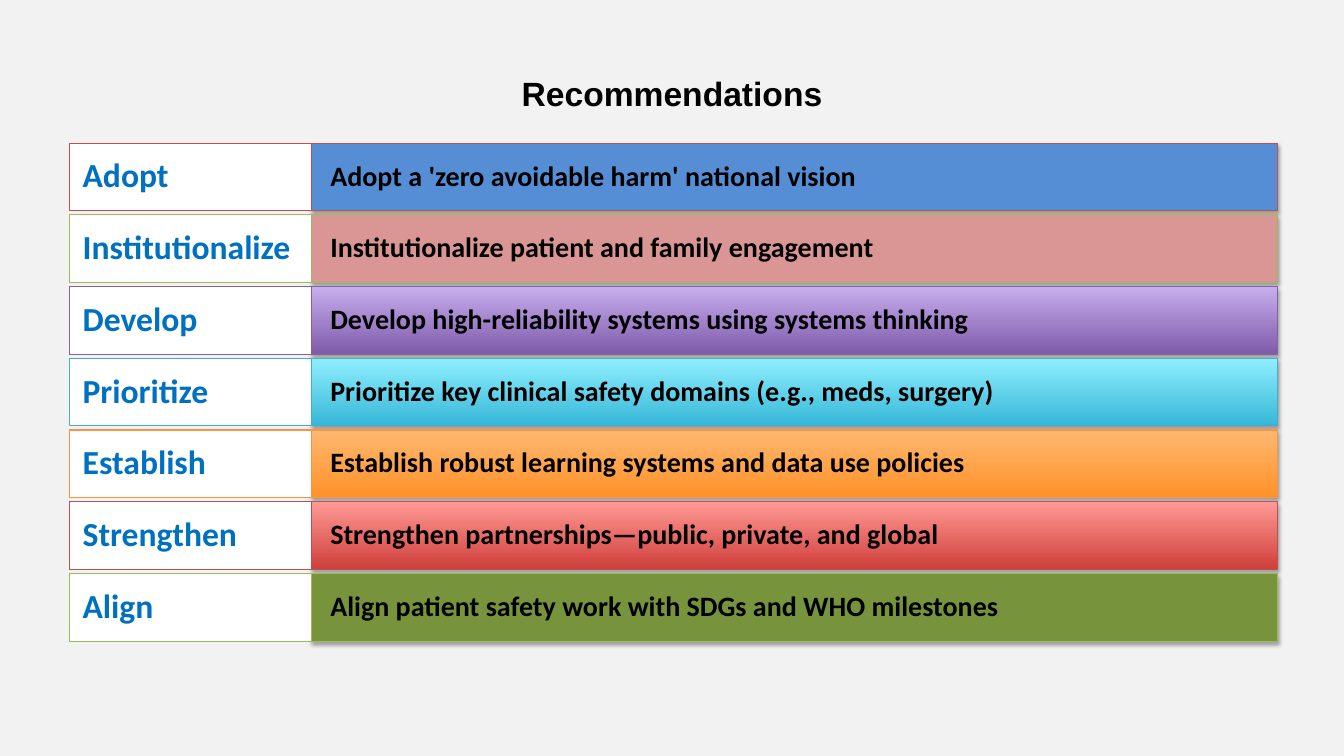
from lxml import etree
from pptx import Presentation
from pptx.dml.color import RGBColor
from pptx.enum.shapes import MSO_SHAPE
from pptx.enum.text import MSO_ANCHOR, PP_ALIGN
from pptx.oxml.ns import qn
from pptx.util import Inches, Pt

RECT = MSO_SHAPE.RECTANGLE
MIDDLE = MSO_ANCHOR.MIDDLE
LEFT, CENTER = PP_ALIGN.LEFT, PP_ALIGN.CENTER

SLIDE_W, SLIDE_H = 13.33, 7.5
ROW_GAP = 0.04
LABEL_SHARE = 0.2

# Label, statement, line colour, fill (one colour, or bottom and top of a gradient)
ROWS = [
    ("Adopt", "Adopt a 'zero avoidable harm' national vision", "BF504D", ["558ED5"]),
    ("Institutionalize", "Institutionalize patient and family engagement", "9BBB59", ["D99694"]),
    ("Develop", "Develop high-reliability systems using systems thinking",
     "8064A2", ["7F5AAB", "C7AEED"]),
    ("Prioritize", "Prioritize key clinical safety domains (e.g., meds, surgery)",
     "49ACC5", ["36B7D7", "90EFFF"]),
    ("Establish", "Establish robust learning systems and data use policies",
     "F79543", ["FF9228", "FFB771"]),
    ("Strengthen", "Strengthen partnerships—public, private, and global",
     "BF504D", ["D03F3B", "FF9995"]),
    ("Align", "Align patient safety work with SDGs and WHO milestones", "9BBB59", ["77933C"]),
]


def rgb(color):
    return RGBColor.from_string(color)


def set_text(sp, text, size, font, color, align, inset_x, inset_y, spacing=1.0):
    tf = sp.text_frame
    tf.word_wrap = True
    tf.vertical_anchor = MIDDLE
    tf.margin_left = tf.margin_right = Inches(inset_x)
    tf.margin_top = tf.margin_bottom = Inches(inset_y)
    p = tf.paragraphs[0]
    p.text = text
    p.alignment = align
    p.line_spacing = spacing
    f = p.runs[0].font
    f.name, f.size, f.bold = font, Pt(size), True
    f.color.rgb = rgb(color)


def add_shadow(sp):
    effects = sp._element.spPr.find(qn("a:effectLst"))
    shadow = etree.SubElement(effects, qn("a:outerShdw"), blurRad=str(Pt(3.1)),
                              dist=str(Pt(1.8)), dir="5400000", rotWithShape="0")
    black = etree.SubElement(shadow, qn("a:srgbClr"), val="000000")
    etree.SubElement(black, qn("a:alpha"), val="35000")


def add_rect(slide, x, y, w, h, colors, line):
    sp = slide.shapes.add_shape(RECT, Inches(x), Inches(y), Inches(w), Inches(h))
    sp.shadow.inherit = False
    if len(colors) == 1:
        sp.fill.solid()
        sp.fill.fore_color.rgb = rgb(colors[0])
    else:
        sp.fill.gradient()
        sp.fill.gradient_angle = 90
        for stop, color, position in zip(sp.fill.gradient_stops, colors, (0, 1)):
            stop.color.rgb = rgb(color)
            stop.position = position
    sp.line.color.rgb = rgb(line)
    sp.line.width = Pt(0.75)
    return sp


def add_title(slide, x, y, w, h):
    sp = slide.shapes.add_textbox(Inches(x), Inches(y), Inches(w), Inches(h))
    set_text(sp, "Recommendations", 24, "Arial", "000000", CENTER, 0.1, 0.05)


def add_row(slide, x, y, w, h, label, statement, line, colors):
    label_w = w * LABEL_SHARE
    bar = add_rect(slide, x + label_w, y, w - label_w, h, colors, line)
    add_shadow(bar)
    set_text(bar, statement, 20, "Calibri", "000000", LEFT, 0.19, 0.17, 0.9)
    tag = add_rect(slide, x, y, label_w, h, ["FFFFFF"], line)
    set_text(tag, label, 24, "Calibri", "0070C0", LEFT, 0.13, 0.07, 0.9)


def add_recommendations(slide, x, y, w, h):
    row_h = (h - ROW_GAP * (len(ROWS) - 1)) / len(ROWS)
    for i, row in enumerate(ROWS):
        add_row(slide, x, y + i * (row_h + ROW_GAP), w, row_h, *row)


def main():
    prs = Presentation()
    prs.slide_width, prs.slide_height = Inches(SLIDE_W), Inches(SLIDE_H)
    slide = prs.slides.add_slide(prs.slide_layouts[6])

    # Background
    slide.background.fill.solid()
    slide.background.fill.fore_color.rgb = rgb("F2F2F2")

    # Title above the list of recommendations
    add_title(slide, SLIDE_W * 0.05, SLIDE_H * 0.04, SLIDE_W * 0.9, 1.25)
    add_recommendations(slide, 0.69, 1.42, 11.98, 4.94)

    prs.save("out.pptx")


if __name__ == "__main__":
    main()
